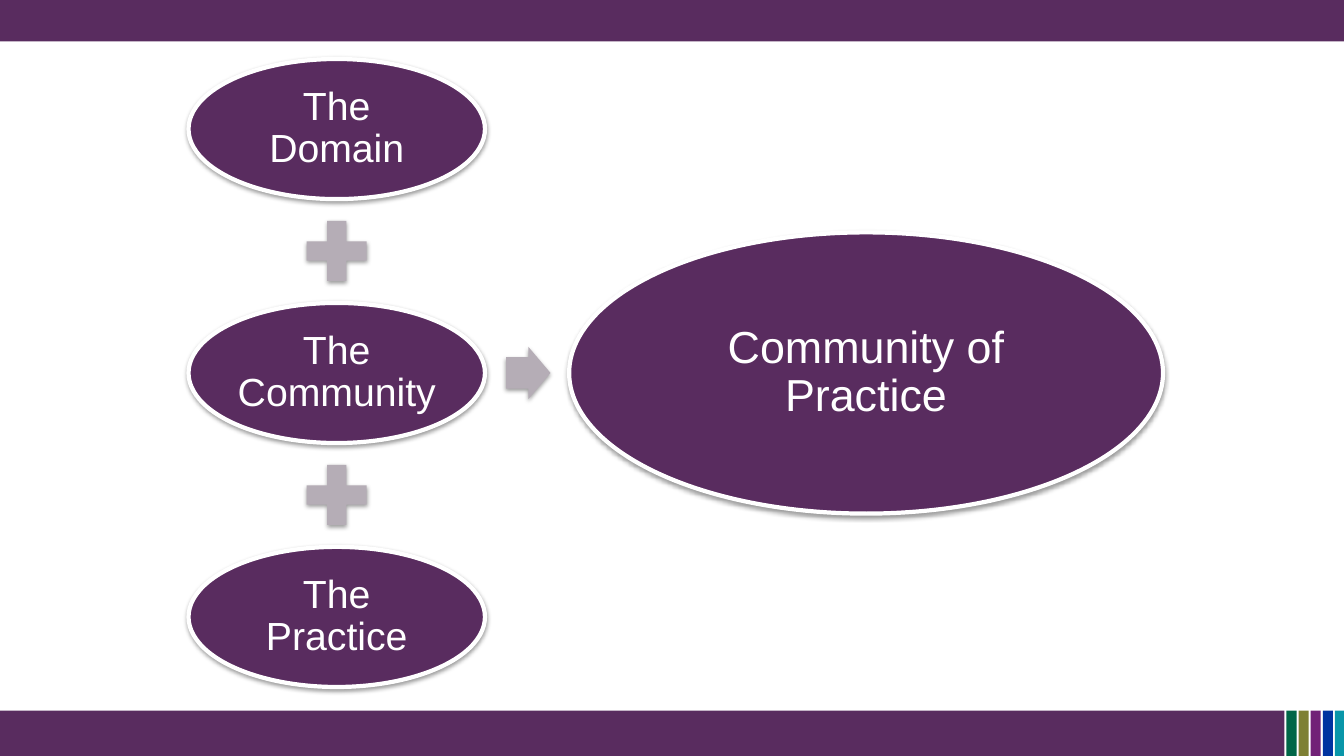
from lxml import etree
from pptx import Presentation
from pptx.dml.color import RGBColor
from pptx.enum.shapes import MSO_SHAPE
from pptx.enum.text import MSO_ANCHOR, PP_ALIGN
from pptx.oxml import parse_xml
from pptx.util import Inches, Pt

RECT, ELLIPSE = MSO_SHAPE.RECTANGLE, MSO_SHAPE.OVAL
PLUS, ARROW = MSO_SHAPE.MATH_PLUS, MSO_SHAPE.RIGHT_ARROW
CENTER, MIDDLE = PP_ALIGN.CENTER, MSO_ANCHOR.MIDDLE
PURPLE = RGBColor(0x59, 0x2C, 0x5F)
GREY = RGBColor(0xB5, 0xAD, 0xB6)
WHITE = RGBColor(0xFF, 0xFF, 0xFF)
GREEN = RGBColor(0x00, 0x66, 0x47)
OLIVE = RGBColor(0x7E, 0x80, 0x34)
VIOLET = RGBColor(0x71, 0x21, 0x77)
BLUE = RGBColor(0x00, 0x33, 0xA0)
TEAL = RGBColor(0x09, 0x96, 0xA9)

PARTS = ["The Domain", "The Community", "The Practice"]
RESULT = "Community of Practice"
STRIPES = [GREEN, OLIVE, VIOLET, BLUE, TEAL]

W, H = 13.33, 7.5
BAR_H, FOOTER_TOP = 0.41, 7.05
STRIPE_LEFT, STRIPE_PITCH, STRIPE_W = 12.76, 0.12, 0.1
COL_X, MID_Y, ROW_PITCH = 3.34, 3.7, 2.42
PART_W, PART_H = 2.94, 1.39
PLUS_SIZE = 0.81
ARROW_X, ARROW_W, ARROW_H = 5.24, 0.44, 0.52
RESULT_X, RESULT_W, RESULT_H = 8.59, 5.89, 2.79

SHADOW = (
    '<a:outerShdw xmlns:a="http://schemas.openxmlformats.org/drawingml/2006/main"'
    ' blurRad="40000" dist="20000" dir="5400000" rotWithShape="0">'
    '<a:srgbClr val="000000"><a:alpha val="38000"/></a:srgbClr></a:outerShdw>'
)

prs = Presentation()
prs.slide_width, prs.slide_height = Inches(W), Inches(H)
s = prs.slides.add_slide(prs.slide_layouts[6])


def add_block(left, top, width, height, fill, kind=RECT):
    sp = s.shapes.add_shape(kind, *map(Inches, (left, top, width, height)))
    sp.shadow.inherit = False
    sp.fill.solid()
    sp.fill.fore_color.rgb = fill
    sp.line.fill.background()
    return sp


def add_centered(kind, x, y, width, height, fill):
    sp = add_block(x - width / 2, y - height / 2, width, height, fill, kind)
    effects = sp._element.spPr.find("{*}effectLst")
    etree.ElementBase.append(effects, parse_xml(SHADOW))
    return sp


def set_text(sp, text, size=28, color=WHITE, font="Arial"):
    tf = sp.text_frame
    tf.word_wrap = True
    tf.vertical_anchor = MIDDLE
    tf.margin_left = tf.margin_right = Inches(0.04)
    tf.margin_top = tf.margin_bottom = Inches(0.04)
    p = tf.paragraphs[0]
    p.alignment = CENTER
    p.line_spacing = 0.9
    r = p.add_run()
    r.text = text
    r.font.name, r.font.size = font, Pt(size)
    r.font.color.rgb = color


def add_bubble(text, x, y, width, height, **text_format):
    sp = add_centered(ELLIPSE, x, y, width, height, PURPLE)
    sp.line.color.rgb = WHITE
    sp.line.width = Pt(3)
    set_text(sp, text, **text_format)


add_block(0, 0, W, BAR_H, PURPLE)
add_block(0, FOOTER_TOP, STRIPE_LEFT - 0.02, H - FOOTER_TOP, PURPLE)
for i, color in enumerate(STRIPES):
    add_block(STRIPE_LEFT + i * STRIPE_PITCH, FOOTER_TOP, STRIPE_W, H - FOOTER_TOP, color)

first_y = MID_Y - ROW_PITCH * (len(PARTS) - 1) / 2
for i, part in enumerate(PARTS):
    y = first_y + i * ROW_PITCH
    if i:
        add_centered(PLUS, COL_X, y - ROW_PITCH / 2, PLUS_SIZE, PLUS_SIZE, GREY)
    add_bubble(part, COL_X, y, PART_W, PART_H)

arrow = add_centered(ARROW, ARROW_X, MID_Y, ARROW_W, ARROW_H, GREY)
arrow.adjustments[0] = 0.6
add_bubble(RESULT, RESULT_X, MID_Y, RESULT_W, RESULT_H, size=32)

prs.save("out.pptx")
